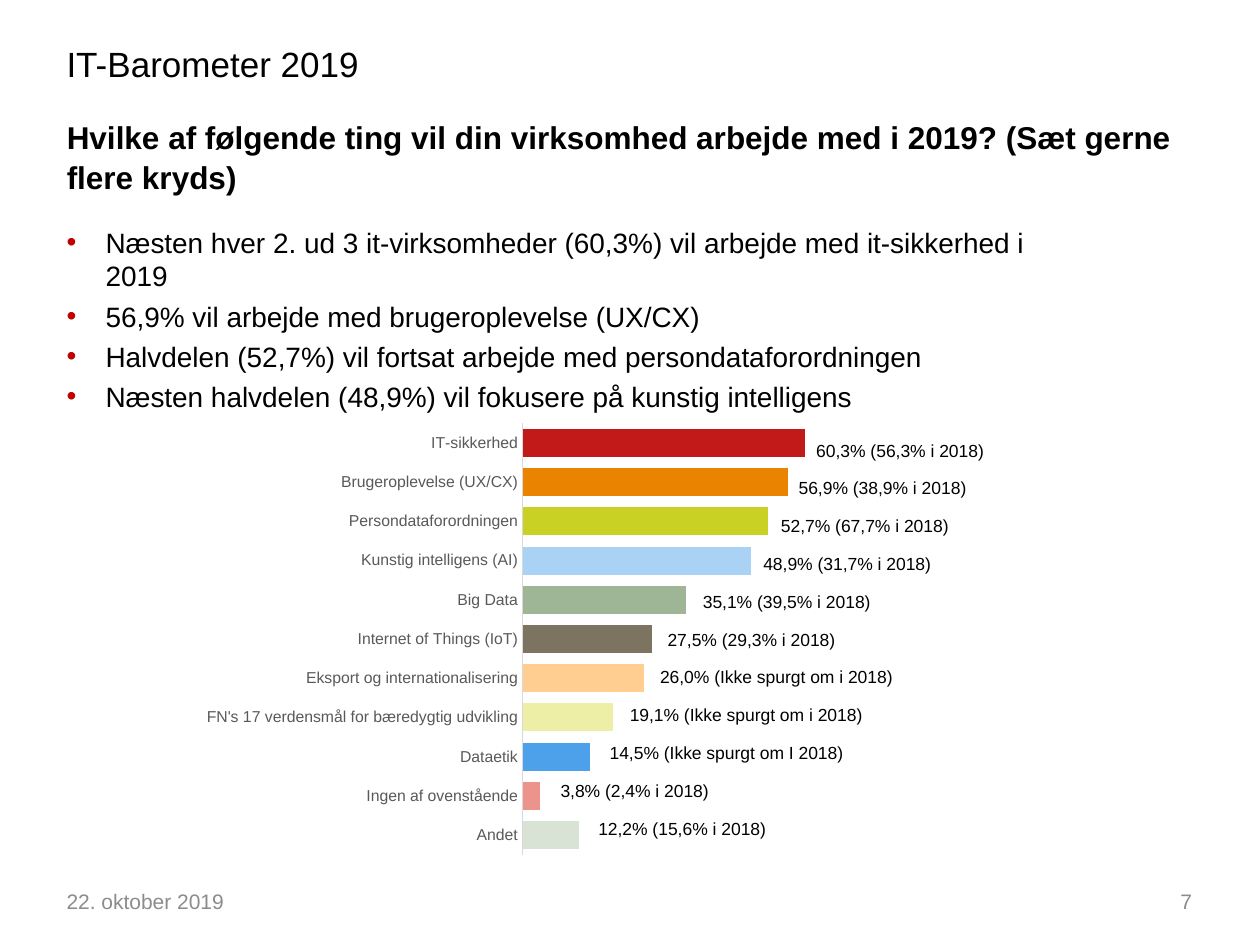
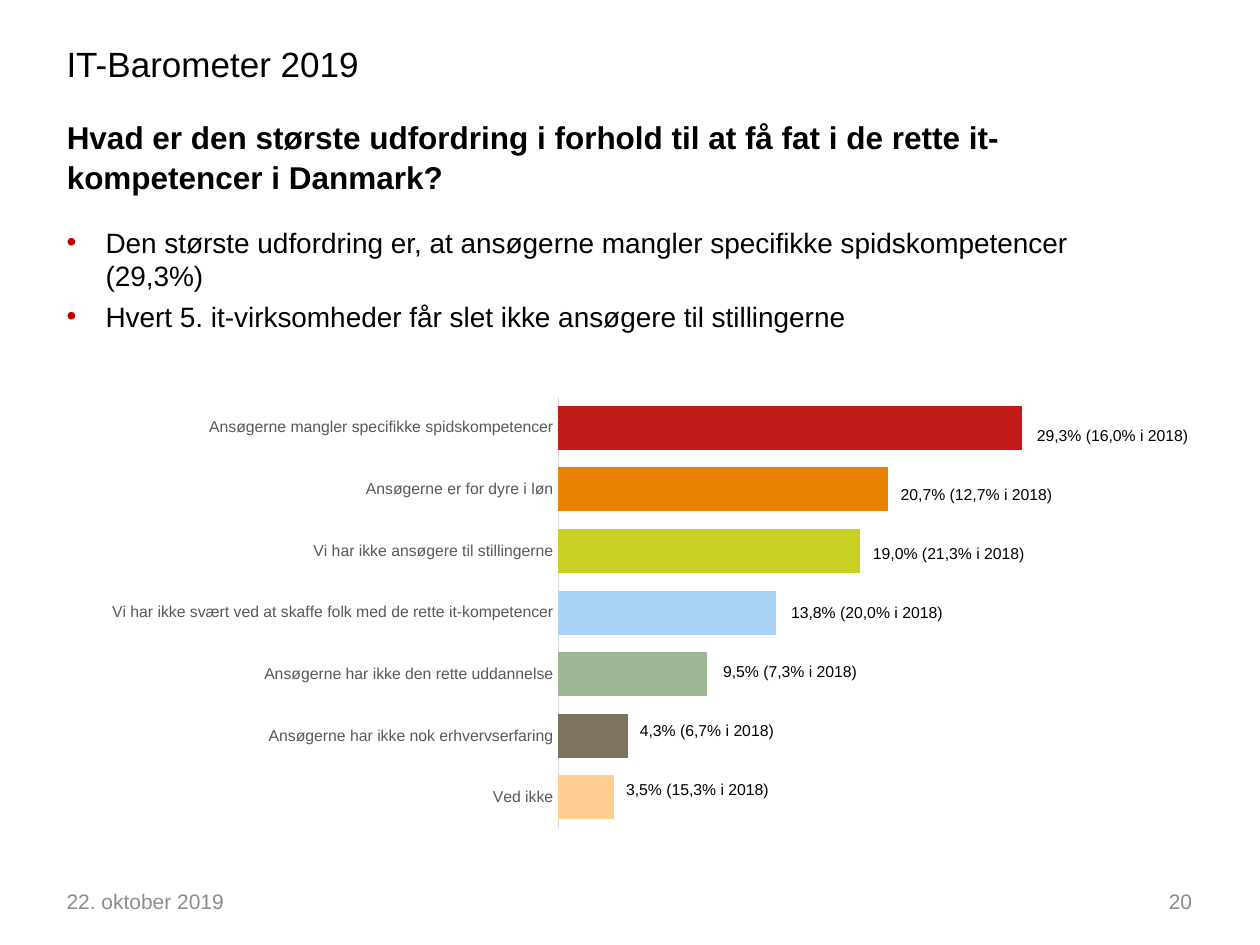
from dataclasses import dataclass

from lxml import etree
from pptx import Presentation
from pptx.chart.chart import Chart
from pptx.chart.data import CategoryChartData
from pptx.dml.color import RGBColor
from pptx.enum.chart import XL_CHART_TYPE, XL_TICK_MARK
from pptx.enum.text import MSO_ANCHOR, MSO_AUTO_SIZE, PP_ALIGN
from pptx.oxml.ns import qn
from pptx.slide import Slide
from pptx.text.text import TextFrame
from pptx.util import Inches, Pt

BAR_CLUSTERED = XL_CHART_TYPE.BAR_CLUSTERED
NO_TICKS = XL_TICK_MARK.NONE
TOP, MIDDLE = MSO_ANCHOR.TOP, MSO_ANCHOR.MIDDLE
FIXED_SIZE, GROW = MSO_AUTO_SIZE.NONE, MSO_AUTO_SIZE.SHAPE_TO_FIT_TEXT
LEFT, RIGHT = PP_ALIGN.LEFT, PP_ALIGN.RIGHT

FONT = "Arial"
BLACK = RGBColor(0x00, 0x00, 0x00)
FOOTER_GREY = RGBColor(0x8C, 0x8C, 0x8C)
AXIS_TEXT = RGBColor(0x59, 0x59, 0x59)
AXIS_LINE = RGBColor(0xD9, 0xD9, 0xD9)
BULLET_RED = RGBColor(0xC0, 0x00, 0x00)
# Bar colours from the top bar down.
BAR_COLOURS = [RGBColor.from_string(code) for code in (
    "C21919", "E98300", "C8D124", "AAD2F5", "9EB696", "7C7461",
    "FFCE90", "ECEFA5", "4DA1EA", "EC938B", "D8E2D5")]

# The page is a grid of 100 columns by 75 rows of square cells.
WIDTH, HEIGHT = Inches(10), Inches(7.5)
CELL = WIDTH // 100
MARGIN = 4.3
AXIS_MAXIMUM = 120


@dataclass(frozen=True)
class Area:
    """A rectangle in grid columns and rows."""
    left: float
    top: float
    width: float
    height: float

    def lengths(self) -> list[int]:
        return [round(cells * CELL)
                for cells in (self.left, self.top, self.width, self.height)]


@dataclass(frozen=True)
class Style:
    size: float
    colour: RGBColor = BLACK
    bold: bool = False


@dataclass(frozen=True)
class Bar:
    category: str
    value: int
    label: str
    label_left: float


@dataclass(frozen=True)
class Survey:
    number: int
    question: str
    findings: list[str]
    findings_height: float
    chart_area: Area
    plot_area: Area
    bars: list[Bar]
    label_size: float
    label_top: float
    label_pitch: float


HEADER_AREA = Area(MARGIN, 2.9, 31.7, 4)
TITLE_AREA = Area(MARGIN, 8.7, 90, 5.5)
DATE_AREA = Area(MARGIN, 69.5, 23.3, 4)
NUMBER_AREA = Area(72.3, 69.5, 23.3, 4)

HEADER_STYLE = Style(20)
TITLE_STYLE = Style(18, bold=True)
FINDING_STYLE = Style(16)
FOOTER_STYLE = Style(12, FOOTER_GREY)

SURVEYS = [
    Survey(
        number=7,
        question="Hvilke af følgende ting vil din virksomhed arbejde med i 2019? "
                 "(Sæt gerne flere kryds)",
        findings=[
            "Næsten hver 2. ud 3 it-virksomheder (60,3%) vil arbejde med "
            "it-sikkerhed i 2019",
            "56,9% vil arbejde med brugeroplevelse (UX/CX)",
            "Halvdelen (52,7%) vil fortsat arbejde med persondataforordningen",
            "Næsten halvdelen (48,9%) vil fokusere på kunstig intelligens",
        ],
        findings_height=16.4,
        chart_area=Area(15.3, 32.9, 53.2, 35.7),
        plot_area=Area(41.5, 33.6, 26.85, 34.25),
        bars=[
            Bar("IT-sikkerhed", 100, "60,3% (56,3% i 2018)", 63.8),
            Bar("Brugeroplevelse (UX/CX)", 94, "56,9% (38,9% i 2018)", 62.4),
            Bar("Persondataforordningen", 87, "52,7% (67,7% i 2018)", 61),
            Bar("Kunstig intelligens (AI)", 81, "48,9% (31,7% i 2018)", 59.6),
            Bar("Big Data", 58, "35,1% (39,5% i 2018)", 54.8),
            Bar("Internet of Things (IoT)", 46, "27,5% (29,3% i 2018)", 52),
            Bar("Eksport og internationalisering", 43,
                "26,0% (Ikke spurgt om i 2018)", 51.4),
            Bar("FN's 17 verdensmål for bæredygtig udvikling", 32,
                "19,1% (Ikke spurgt om i 2018)", 49),
            Bar("Dataetik", 24, "14,5% (Ikke spurgt om I 2018)", 47.4),
            Bar("Ingen af ovenstående", 6, "3,8% (2,4% i 2018)", 43.5),
            Bar("Andet", 20, "12,2% (15,6% i 2018)", 46.5),
        ],
        label_size=10, label_top=34.4, label_pitch=3,
    ),
    Survey(
        number=20,
        question="Hvad er den største udfordring i forhold til at få fat i de rette "
                 "it-kompetencer i Danmark?",
        findings=[
            "Den største udfordring er, at ansøgerne mangler specifikke "
            "spidskompetencer (29,3%)",
            "Hvert 5. it-virksomheder får slet ikke ansøgere til stillingerne",
        ],
        findings_height=10,
        chart_area=Area(7.2, 30.8, 82.7, 35.7),
        plot_area=Area(44.3, 31.5, 44.2, 34.25),
        bars=[
            Bar("Ansøgerne mangler specifikke spidskompetencer", 100,
                "29,3% (16,0% i 2018)", 81.3),
            Bar("Ansøgerne er for dyre i løn", 71, "20,7% (12,7% i 2018)", 70.5),
            Bar("Vi har ikke ansøgere til stillingerne", 65,
                "19,0% (21,3% i 2018)", 68.3),
            Bar("Vi har ikke svært ved at skaffe folk med de rette it-kompetencer",
                47, "13,8% (20,0% i 2018)", 61.8),
            Bar("Ansøgerne har ikke den rette uddannelse", 32,
                "9,5% (7,3% i 2018)", 56.4),
            Bar("Ansøgerne har ikke nok erhvervserfaring", 15,
                "4,3% (6,7% i 2018)", 49.8),
            Bar("Ved ikke", 12, "3,5% (15,3% i 2018)", 48.7),
        ],
        label_size=9, label_top=33.3, label_pitch=4.68,
    ),
]


def write(frame: TextFrame, lines: list[str], style: Style,
          align: PP_ALIGN = LEFT) -> None:
    for index, line in enumerate(lines):
        para = frame.add_paragraph() if index else frame.paragraphs[0]
        para.alignment = align
        span = para.add_run()
        span.text = line
        span.font.name = FONT
        span.font.size = Pt(style.size)
        span.font.bold = style.bold
        span.font.color.rgb = style.colour


def add_text(page: Slide, area: Area, lines: list[str], style: Style,
             align: PP_ALIGN = LEFT, anchor: MSO_ANCHOR = TOP) -> TextFrame:
    frame = page.shapes.add_textbox(*area.lengths()).text_frame
    frame.word_wrap = True
    frame.vertical_anchor = anchor
    write(frame, lines, style, align)
    return frame


def add_title(page: Slide, question: str) -> None:
    title = page.shapes.title
    title.left, title.top, title.width, title.height = TITLE_AREA.lengths()
    frame = title.text_frame
    frame.auto_size = FIXED_SIZE
    frame.vertical_anchor = TOP
    write(frame, [question], TITLE_STYLE)
    frame.paragraphs[0].line_spacing = 1.05


def add_findings(page: Slide, survey: Survey) -> None:
    area = Area(MARGIN, 17.4, 82.3, survey.findings_height)
    frame = add_text(page, area, survey.findings, FINDING_STYLE)
    indent = Inches(0.31)
    for index, para in enumerate(frame.paragraphs):
        properties = para._p.get_or_add_pPr()
        properties.set("marL", str(indent))
        properties.set("indent", str(-indent))
        colour = etree.SubElement(properties, qn("a:buClr"))
        etree.SubElement(colour, qn("a:srgbClr"), val=str(BULLET_RED))
        etree.SubElement(properties, qn("a:buFont"), typeface=FONT)
        etree.SubElement(properties, qn("a:buChar"), char="•")
        if index:
            para.space_before = Pt(3.7)


def place_plot(chart: Chart, outer: Area, inner: Area) -> None:
    """Fix the bars' rectangle inside the chart's frame."""
    plot_area = chart._chartSpace.chart.plotArea
    for layout in plot_area.findall(qn("c:layout")):
        plot_area.remove(layout)
    layout = etree.Element(qn("c:layout"))
    plot_area.insert(0, layout)
    manual = etree.SubElement(layout, qn("c:manualLayout"))
    settings = {
        "layoutTarget": "inner", "xMode": "edge", "yMode": "edge",
        "x": (inner.left - outer.left) / outer.width,
        "y": (inner.top - outer.top) / outer.height,
        "w": inner.width / outer.width,
        "h": inner.height / outer.height,
    }
    for name, value in settings.items():
        etree.SubElement(manual, qn(f"c:{name}"), val=str(value))


def add_bar_chart(page: Slide, survey: Survey) -> None:
    data = CategoryChartData()
    upward = survey.bars[::-1]
    data.categories = [bar.category for bar in upward]
    data.add_series("Series 1", [bar.value for bar in upward])
    chart = page.shapes.add_chart(
        BAR_CLUSTERED, *survey.chart_area.lengths(), data).chart
    chart.has_legend = False
    chart.has_title = False
    chart.font.name = FONT
    chart.font.size = Pt(10)
    chart.font.color.rgb = BLACK
    place_plot(chart, survey.chart_area, survey.plot_area)

    categories = chart.category_axis
    categories.major_tick_mark = categories.minor_tick_mark = NO_TICKS
    categories.has_major_gridlines = False
    categories.format.line.color.rgb = AXIS_LINE
    categories.format.line.width = Pt(0.75)
    font = categories.tick_labels.font
    font.name, font.size = FONT, Pt(9)
    font.color.rgb = AXIS_TEXT

    values = chart.value_axis
    values.minimum_scale, values.maximum_scale = 0, AXIS_MAXIMUM
    values.has_major_gridlines = False
    values.tick_labels.number_format = "0.00%"
    values.tick_labels.number_format_is_linked = False
    values.visible = False

    plot = chart.plots[0]
    plot.gap_width = 40
    plot.vary_by_categories = False
    series = plot.series[0]
    series.format.fill.solid()
    series.format.fill.fore_color.rgb = BAR_COLOURS[0]
    last = len(upward) - 1
    for index, colour in enumerate(BAR_COLOURS[:len(upward)]):
        fill = series.points[last - index].format.fill
        fill.solid()
        fill.fore_color.rgb = colour


def add_bar_labels(page: Slide, survey: Survey) -> None:
    size = survey.label_size
    for row, bar in enumerate(survey.bars):
        width = 0.065 * size * len(bar.label) + 2.4
        top = survey.label_top + row * survey.label_pitch
        area = Area(bar.label_left, top, width, 0.2 * size + 0.7)
        frame = add_text(page, area, [bar.label], Style(size))
        frame.word_wrap = False
        frame.auto_size = GROW


def add_survey(deck: Presentation, survey: Survey) -> None:
    page = deck.slides.add_slide(deck.slide_layouts[5])
    add_text(page, DATE_AREA, ["22. oktober 2019"], FOOTER_STYLE, anchor=MIDDLE)
    add_text(page, HEADER_AREA, ["IT-Barometer 2019"], HEADER_STYLE)
    add_text(page, NUMBER_AREA, [str(survey.number)], FOOTER_STYLE, RIGHT, MIDDLE)
    add_title(page, survey.question)
    add_findings(page, survey)
    add_bar_chart(page, survey)
    add_bar_labels(page, survey)


def main() -> None:
    deck = Presentation()
    deck.slide_width, deck.slide_height = WIDTH, HEIGHT
    for survey in SURVEYS:
        add_survey(deck, survey)
    deck.save("out.pptx")


if __name__ == "__main__":
    main()
